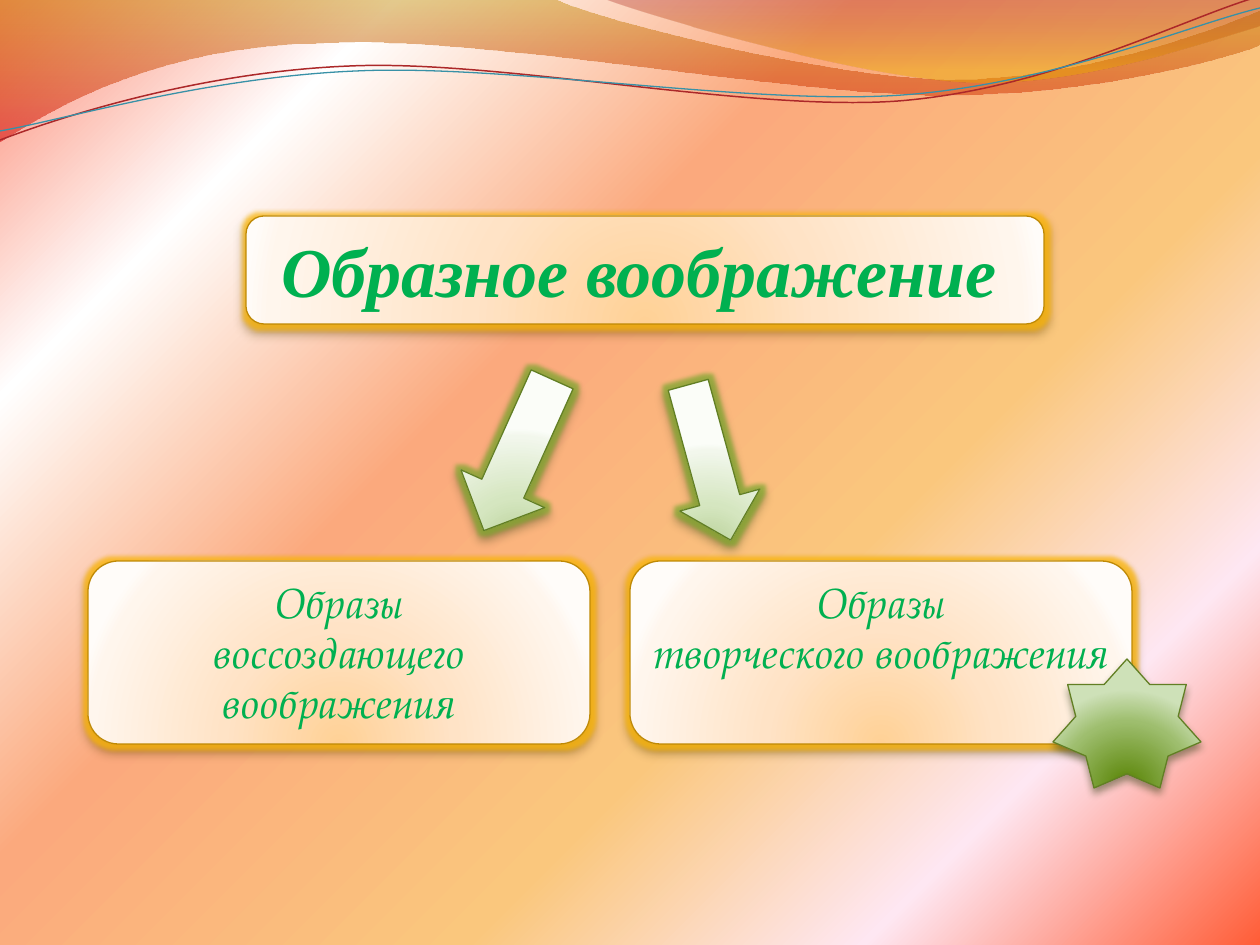
from lxml import etree
from pptx import Presentation
from pptx import util as u
from pptx.dml.color import RGBColor
from pptx.enum import shapes, text
from pptx.oxml import ns

PX = 914400 / 126
SHAPE = shapes.MSO_SHAPE
COLORS = {"text": "00B050",
          "gold_line": "BF8905", "gold_shadow": "5B4101", "gold_glow": "FEB80A",
          "green_line": "627F24", "green_shadow": "2F3D11", "green_glow": "84AA33",
          "red_curve": "AC2829", "blue_curve": "3891A7"}
LOW = (50, 130, 50, -30)
GRADIENTS = {
    "page": ([(0, "FF5D37"), (18, "FEE7F2"), (36, "FAC77D"), (61, "FBA97D"),
              (82, "FFFFFF"), (100, "FB8871")], (100, 100, 0, 0)),
    "gold": ([(0, "FFD196"), (43, "FFE3C6"), (93, "FFF6ED"), (100, "FFFCF9")], LOW),
    "pale_green": ([(0, "B6CF94"), (43, "D5E6C0"), (93, "F2F7EC"), (100, "FBFDF8")], LOW),
    "green": ([(0, "568200"), (68, "9EBE6E"), (100, "CEE1B8")], LOW),
    "wide_wave": ([(0, "C38B00", 45), (100, "D60305", 55)], None),
    "top_wave": ([(0, "A11112", 30), (80, "E9A600", 45)], None),
}
WIDE_WAVE = [
    [(0, 0)], [(554, -1)], [(600, 21), (837, 79), (955, 79)],
    [(1075, 79), (1207, 33), (1260, 11)], [(1261, 45)],
    [(1239, 55), (1096, 96), (940, 95)], [(784, 95), (481, 35), (324, 43)],
    [(163, 45), (58, 105), (-1, 142)]]
TOP_WAVE = [
    [(604, -1)], [(641, 14), (859, 78), (969, 82)],
    [(1079, 87), (1211, 40), (1260, 26)], [(1260, 0)]]
RED_CURVE = [
    [(0, 140)], [(60, 117), (199, 72), (349, 66)],
    [(498, 59), (747, 112), (898, 101)], [(1050, 89), (1182, 19), (1257, -3)]]
BLUE_CURVE = [
    [(0, 131)], [(59, 121), (207, 77), (357, 71)],
    [(508, 64), (752, 106), (903, 95)], [(1053, 84), (1186, 26), (1260, 8)]]
TITLE = {"size": u.Pt(40), "name": "Times New Roman", "bold": True, "italic": True}
BODY = {"size": u.Pt(24), "name": "TeX Gyre Pagella", "italic": True}


def px(n):
    """Turn pixels into EMU."""
    return u.Emu(round(n * PX))


def rgb(name):
    """Look up a named colour."""
    return RGBColor.from_string(COLORS[name])


def assign(obj, values):
    """Set every attribute named in a dict."""
    for key, value in values.items():
        setattr(obj, key, value)


def child(parent, tag, **attrs):
    """Append a DrawingML element."""
    return etree.SubElement(parent, ns.qn("a:" + tag), {k: str(v) for k, v in attrs.items()})


def color(parent, value, alpha=100):
    """Append a colour with its opacity in percent."""
    child(child(parent, "srgbClr", val=value), "alpha", val=alpha * 1000)


def paint(owner, element, name):
    """Fill a shape or background with a named gradient."""
    stops, focus = GRADIENTS[name]
    owner.fill.solid()
    old = next(element.iter(ns.qn("a:solidFill")))
    grad = etree.Element(ns.qn("a:gradFill"), rotWithShape="1")
    stop_list = child(grad, "gsLst")
    for pos, *value in stops:
        color(child(stop_list, "gs", pos=pos * 1000), *value)
    if focus:
        sides = {k: v * 1000 for k, v in zip("ltrb", focus)}
        child(child(grad, "path", path="circle"), "fillToRect", **sides)
    else:
        child(grad, "lin", ang=5400000, scaled=1)
    old.getparent().replace(old, grad)


def outline(sp, name, width):
    """Give a shape a solid line."""
    sp.line.color.rgb = rgb(name)
    sp.line.width = u.Pt(width)


def add_free(s, segments, closed):
    """Add an outline of straight and cubic segments."""
    first, *rest = [(px(x), px(y)) for seg in segments for x, y in seg]
    builder = s.shapes.build_freeform(*first)
    builder.add_line_segments(rest, close=closed)
    sp = builder.convert_to_shape()
    lines = iter(list(sp.element.iter(ns.qn("a:lnTo"))))
    for seg in segments[1:]:
        steps = [next(lines) for _ in seg]
        if len(steps) == 3:
            curve = etree.Element(ns.qn("a:cubicBezTo"))
            steps[0].addprevious(curve)
            for step in steps:
                curve.append(step[0])
                step.getparent().remove(step)
    sp.shadow.inherit = False
    return sp


def add_wave(s, segments, gradient):
    """Add a translucent band."""
    sp = add_free(s, segments, True)
    paint(sp, sp.element, gradient)
    sp.line.fill.background()


def add_curve(s, segments, name, width):
    """Add an open curved line."""
    sp = add_free(s, segments, False)
    sp.fill.background()
    outline(sp, name, width)


def add_figure(s, kind, box, gradient, tone, rotation=0, glow=True):
    """Add a shaded preset shape."""
    sp = s.shapes.add_shape(kind, *map(px, box))
    sp.rotation = rotation
    paint(sp, sp.element, gradient)
    outline(sp, tone + "_line", 0.75)
    sp.shadow.inherit = False
    effects = next(sp.element.iter(ns.qn("a:effectLst")))
    if glow:
        color(child(effects, "glow", rad=u.Pt(5)), COLORS[tone + "_glow"], 75)
    shadow = child(effects, "outerShdw", blurRad=u.Pt(4.5), dist=u.Pt(3),
                   dir=5400000, algn="ctr", rotWithShape=0)
    color(shadow, COLORS[tone + "_shadow"], 48)
    return sp


def add_panel(s, box, lines, font, align, frame):
    """Add a rounded box with text in one format."""
    sp = add_figure(s, SHAPE.FLOWCHART_ALTERNATE_PROCESS, box, "gold", "gold")
    tf = sp.text_frame
    assign(tf, {"word_wrap": True, **frame})
    for i, line in enumerate(lines):
        p = tf.add_paragraph() if i else tf.paragraphs[0]
        p.alignment = align
        r = p.add_run()
        r.text = line
        assign(r.font, font)
        r.font.color.rgb = rgb("text")


def main():
    """Build the slide."""
    prs = Presentation()
    assign(prs, {"slide_width": px(1260), "slide_height": px(945)})
    s = prs.slides.add_slide(prs.slide_layouts[6])
    paint(s.background, s.element, "page")
    add_wave(s, WIDE_WAVE, "wide_wave")
    add_wave(s, TOP_WAVE, "top_wave")
    add_curve(s, RED_CURVE, "red_curve", 0.85)
    add_curve(s, BLUE_CURVE, "blue_curve", 0.75)
    add_panel(s, (246, 216, 798, 108), ["Образное воображение"], TITLE, text.PP_ALIGN.LEFT,
              {"vertical_anchor": text.MSO_ANCHOR.MIDDLE, "margin_left": px(30)})
    for i, kind in enumerate(("воссоздающего", "творческого")):
        add_panel(s, (88 + 542 * i, 561, 502, 183), ["Образы", kind + " воображения"],
                  BODY, text.PP_ALIGN.CENTER, {"vertical_anchor": text.MSO_ANCHOR.TOP})
    for box, rotation in (((472, 372, 92, 166), 24.3), ((668, 382, 83, 161), -15.3)):
        add_figure(s, SHAPE.DOWN_ARROW, box, "pale_green", "green", rotation)
    add_figure(s, SHAPE.STAR_7_POINT, (1053, 659, 148, 129), "green", "green", glow=False)
    prs.save("out.pptx")


if __name__ == "__main__":
    main()
